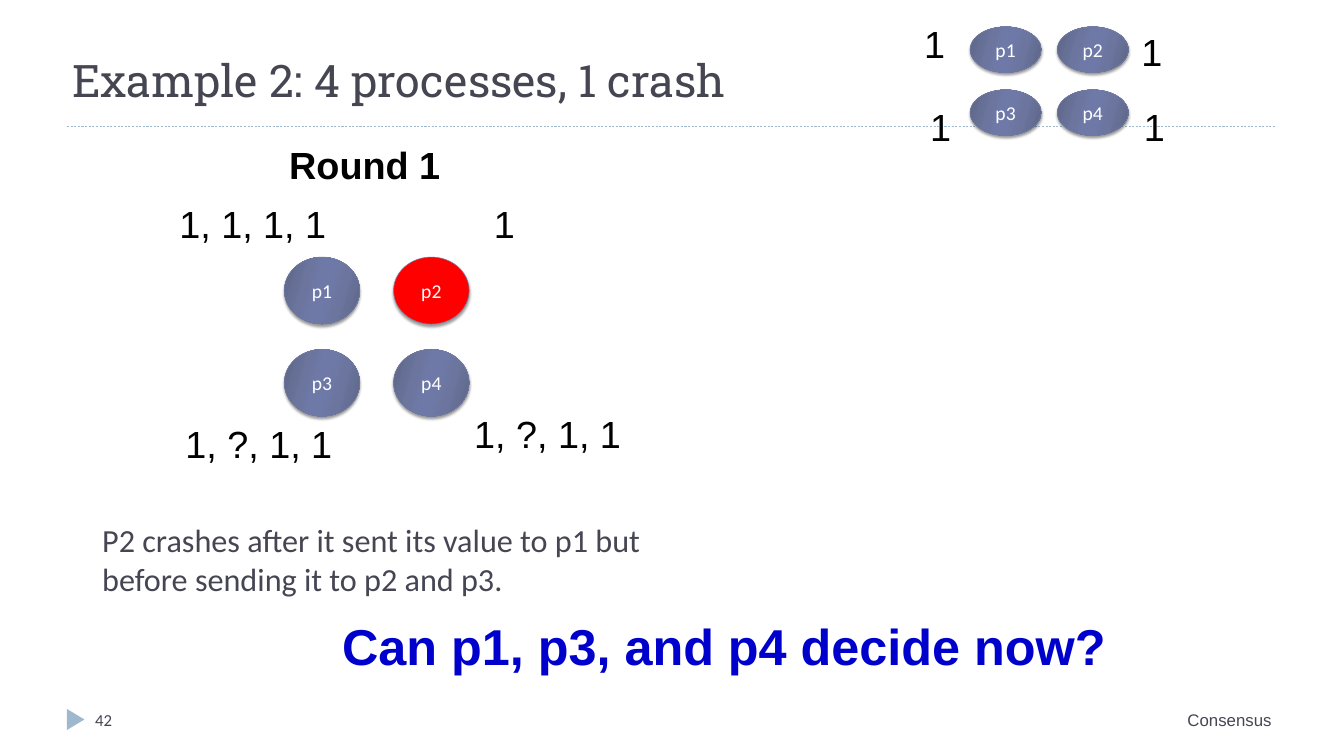
from lxml.etree import SubElement
from pptx import Presentation
from pptx.dml.color import RGBColor
from pptx.enum.dml import MSO_LINE_DASH_STYLE as Dash
from pptx.enum.shapes import MSO_CONNECTOR as Connector, MSO_SHAPE as Shape
from pptx.enum.text import MSO_ANCHOR as Anchor, MSO_AUTO_SIZE as AutoSize, PP_ALIGN as Align
from pptx.oxml import parse_xml
from pptx.oxml.ns import nsdecls, qn
from pptx.util import Pt

EMU_PER_PX = 9144
COLORS = {
    "ink": "464653", "black": "000000", "white": "FFFFFF", "question": "0000CC",
    "accent": "9FB8CD", "outline": "727CA3", "crashed": "FF0000",
    "edge": "5D6585", "middle": "6B759E", "center": "6E79A7",
}
GRADIENT = [(0, "edge"), (30, "middle"), (45, "center"),
            (55, "center"), (73, "middle"), (100, "edge")]


def px(*lengths):
    return [length * EMU_PER_PX for length in lengths]


def color(name):
    return RGBColor.from_string(COLORS[name])


def style(para, size, name, ink, bold=False, align=Align.LEFT):
    para.alignment = align
    para.font.size = Pt(size)
    para.font.name = name
    para.font.bold = bold
    para.font.color.rgb = color(ink)


def add_text(shapes, box, text, size, name="Arial", ink="black", bold=False,
             align=Align.LEFT, wrap=False):
    frame = shapes.add_textbox(*px(*box)).text_frame
    frame.word_wrap = wrap
    frame.auto_size = AutoSize.NONE if wrap else AutoSize.SHAPE_TO_FIT_TEXT
    para = frame.paragraphs[0]
    para.text = text
    style(para, size, name, ink, bold, align)
    return para


def add_gradient(shape):
    stops = "".join(f'<a:gs pos="{at * 1000}"><a:srgbClr val="{COLORS[name]}"/></a:gs>'
                    for at, name in GRADIENT)
    fill = parse_xml(f'<a:gradFill {nsdecls("a")}><a:gsLst>{stops}</a:gsLst>'
                     f'<a:lin ang="{16 * 60000}" scaled="0"/></a:gradFill>')
    shape._element.spPr.find(qn("a:prstGeom")).addnext(fill)


def add_shadow(shape):
    shape.shadow.inherit = False
    effects = shape._element.spPr.find(qn("a:effectLst"))
    effects.append(parse_xml(
        f'<a:outerShdw {nsdecls("a")} blurRad="{Pt(4)}" dist="{Pt(3.4)}" dir="5400000" '
        f'rotWithShape="0"><a:srgbClr val="{COLORS["black"]}"><a:alpha val="40000"/>'
        '</a:srgbClr></a:outerShdw>'))


def add_process(shapes, box, name, crashed):
    oval = shapes.add_shape(Shape.OVAL, *px(*box))
    if crashed:
        oval.fill.solid()
        oval.fill.fore_color.rgb = color("crashed")
    else:
        add_gradient(oval)
    oval.line.color.rgb = color("outline")
    oval.line.width = Pt(0.75)
    add_shadow(oval)
    oval.text_frame.vertical_anchor = Anchor.MIDDLE
    para = oval.text_frame.paragraphs[0]
    para.text = name
    style(para, 28, "Calibri", "white", align=Align.CENTER)


def add_processes(shapes, box, size, values, crashed=None):
    left, top, width, height = box
    oval_width, oval_height = size
    for index in range(4):
        row, column = divmod(index, 2)
        name = f"p{index + 1}"
        add_process(shapes, (left + column * (width - oval_width),
                             top + row * (height - oval_height), *size),
                    name, name == crashed)
    for x, y, text in values:
        value_width = 62 if len(text) == 1 else 315
        add_text(shapes, (left + x, top + y, value_width, 101), text, 54)


def add_header(page, box):
    left, top, width, height = box
    title = page.shapes.title
    title.left, title.top, title.width, title.height = px(left, top, width, 217)
    title.text_frame.vertical_anchor = Anchor.BOTTOM
    title.text_frame.auto_size = AutoSize.NONE
    para = title.text_frame.paragraphs[0]
    para.text = "Example 2: 4 processes, 1 crash"
    style(para, 64, "Roboto Slab", "ink")
    rule = page.shapes.add_connector(
        Connector.STRAIGHT, *px(left, top + height, left + width, top + height))
    rule.line.color.rgb = color("accent")
    rule.line.width = Pt(0.75)
    rule.line.dash_style = Dash.DASH
    SubElement(rule._element.spPr, qn("a:effectLst"))


def add_round(page, box):
    left, top, width, height = box
    add_text(page.shapes, (left + 218, top, 323, 101), "Round 1", 54, bold=True)
    add_processes(page.shapes, (left + 218, top + 233, 367, 316), (150, 133),
                  [(-218, -117, "1, 1, 1, 1"), (406, -117, "1"),
                   (-206, 320, "1, ?, 1, 1"), (367, 300, "1, ?, 1, 1")], crashed="p2")


def add_conclusion(page, box):
    left, top, width, height = box
    note = add_text(page.shapes, (left, top, 1178, height),
                    "P2 crashes after it sent its value to p1 but before sending it to p2 and p3.",
                    46, "Calibri", "ink", wrap=True)
    note._p.get_or_add_pPr().set("marL", str(60 * EMU_PER_PX))
    add_text(page.shapes, (left + 536, top + 188, 1580, 131),
             "Can p1, p3, and p4 decide now?", 72, ink="question", bold=True)


def add_footer(page, box):
    left, top, width, height = box
    marker = page.shapes.add_shape(Shape.ISOSCELES_TRIANGLE, *px(left - 4, top + 7, 42, 35))
    marker.rotation = 90
    marker.shadow.inherit = False
    marker.fill.solid()
    marker.fill.fore_color.rgb = color("accent")
    marker.line.fill.background()
    add_text(page.shapes, (left + 46, top, 578, height), "42", 24, "Calibri", "ink", wrap=True)
    add_text(page.shapes, (left + width - 1022, top, 1022, height), "Consensus", 24,
             ink="ink", align=Align.RIGHT, wrap=True)


def main():
    deck = Presentation()
    deck.slide_width, deck.slide_height = px(2667, 1500)
    page = deck.slides.add_slide(deck.slide_layouts[5])
    add_header(page, (133, 0, 2400, 250))
    add_round(page, (346, 277, 900, 654))
    add_processes(page.shapes.add_group_shape().shapes, (1925, 53, 314, 216), (141, 91),
                  [(-101, -16, "1"), (330, -1, "1"), (-89, 148, "1"), (335, 148, "1")])
    add_conclusion(page, (133, 1028, 2400, 319))
    add_footer(page, (133, 1403, 2400, 80))
    deck.save("out.pptx")


if __name__ == "__main__":
    main()
